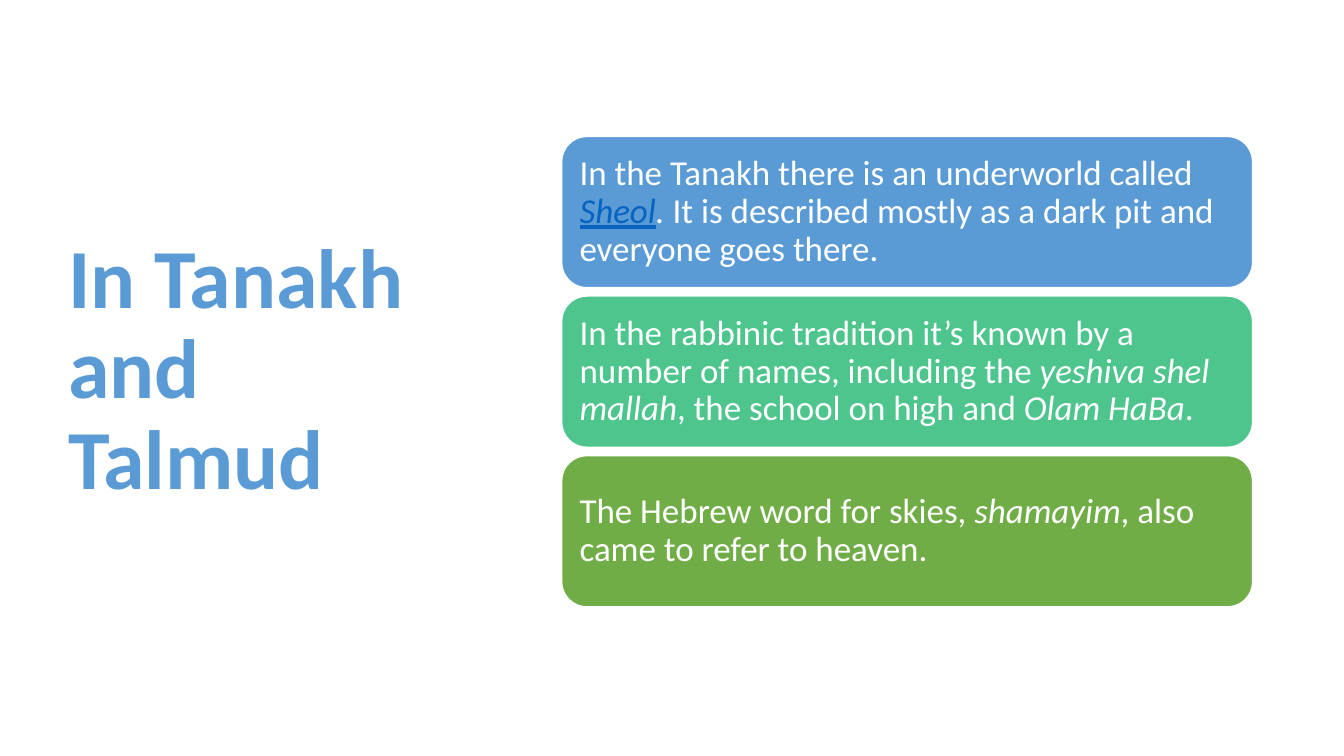
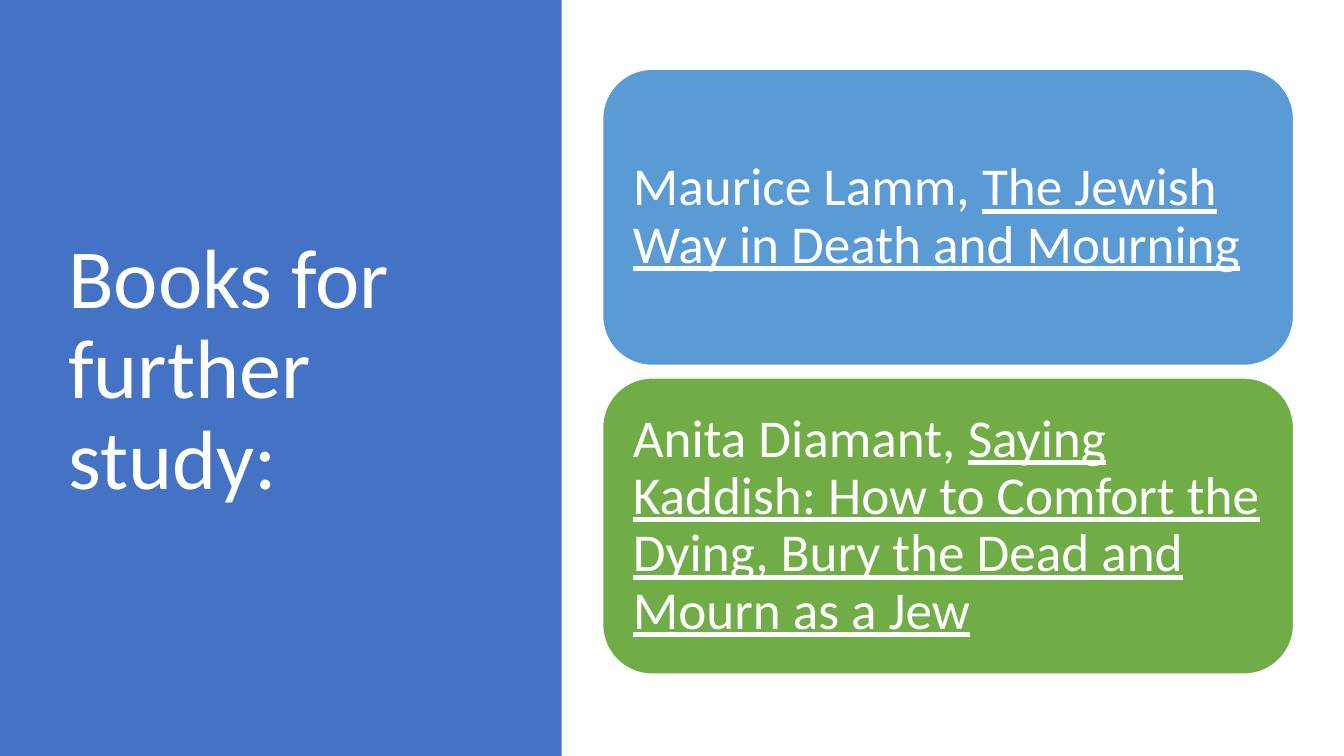
from pptx import Presentation
from pptx.dml.color import RGBColor
from pptx.enum.shapes import MSO_SHAPE
from pptx.enum.text import MSO_ANCHOR, MSO_AUTO_SIZE, PP_ALIGN
from pptx.util import Pt

PX = 9525  # EMU in one px, 96 px to the inch
FONT = "Calibri"
WHITE, BLUE, PANEL_BLUE = "FFFFFF", "5B9BD5", "4472C4"
MINT, GREEN, LINK_BLUE = "4DC58D", "70AD47", "0563C1"
CARD_WIDTH = 658


def color(hex_string):
    return RGBColor.from_string(hex_string)


def write_text(shape, runs, size, inset):
    """Fill the shape with one left-aligned paragraph of (text, font attributes, colour) runs."""
    frame = shape.text_frame
    frame.word_wrap = True
    frame.auto_size = MSO_AUTO_SIZE.NONE
    frame.vertical_anchor = MSO_ANCHOR.MIDDLE
    frame.margin_left = frame.margin_right = inset * PX
    frame.margin_top = frame.margin_bottom = inset * PX
    paragraph = frame.paragraphs[0]
    paragraph.alignment = PP_ALIGN.LEFT
    paragraph.line_spacing = 0.9
    for text, attributes, run_color in runs:
        run = paragraph.add_run()
        run.text = text
        run.font.name = FONT
        run.font.size = Pt(size)
        run.font.color.rgb = color(run_color)
        for attribute in attributes:
            setattr(run.font, attribute, True)


slides = [
    {
        "title": ("In Tanakh and Talmud", ["bold"], BLUE),
        "panel": False,
        "left": 535, "top": 130, "height": 144, "gap": 8, "size": 25, "inset": 10,
        "cards": [
            (BLUE, [
                ("In the Tanakh there is an underworld called ", [], WHITE),
                ("Sheol", ["italic", "underline"], LINK_BLUE),
                (". ", ["italic"], WHITE),
                ("It is described mostly as a dark pit and everyone goes there.", [], WHITE),
            ]),
            (MINT, [
                ("In the rabbinic tradition it’s known by a number of names, including the ", [], WHITE),
                ("yeshiva shel mallah", ["italic"], WHITE),
                (", the school on high and ", [], WHITE),
                ("Olam HaBa", ["italic"], WHITE),
                (".", [], WHITE),
            ]),
            (GREEN, [
                ("The Hebrew word for skies, ", [], WHITE),
                ("shamayim", ["italic"], WHITE),
                (", also came to refer to heaven.", [], WHITE),
            ]),
        ],
    },
    {
        "title": ("Books for further study:", [], WHITE),
        "panel": True,
        "left": 574, "top": 66, "height": 282, "gap": 12, "size": 38, "inset": 15,
        "cards": [
            (BLUE, [
                ("Maurice Lamm, ", [], WHITE),
                ("The Jewish Way in Death and Mourning", ["underline"], WHITE),
            ]),
            (GREEN, [
                ("Anita Diamant, ", [], WHITE),
                ("Saying Kaddish: How to Comfort the Dying, Bury the Dead and Mourn as a Jew",
                 ["underline"], WHITE),
            ]),
        ],
    },
]

presentation = Presentation()
presentation.slide_width = 1280 * PX
presentation.slide_height = 720 * PX
title_only = presentation.slide_layouts[5]

for content in slides:
    slide = presentation.slides.add_slide(title_only)
    title = slide.shapes.title
    title.left, title.top, title.width, title.height = 55 * PX, 65 * PX, 399 * PX, 578 * PX
    write_text(title, [content["title"]], 60, 10)

    if content["panel"]:
        panel = slide.shapes.add_shape(MSO_SHAPE.RECTANGLE, 0, 0, 535 * PX, 720 * PX)
        panel.shadow.inherit = False
        panel.fill.solid()
        panel.fill.fore_color.rgb = color(PANEL_BLUE)
        panel.line.fill.background()
        title.element.addprevious(panel.element)  # keep the title in front

    for row, (fill, runs) in enumerate(content["cards"]):
        top = content["top"] + row * (content["height"] + content["gap"])
        card = slide.shapes.add_shape(
            MSO_SHAPE.ROUNDED_RECTANGLE,
            content["left"] * PX, top * PX, CARD_WIDTH * PX, content["height"] * PX)
        card.shadow.inherit = False
        card.fill.solid()
        card.fill.fore_color.rgb = color(fill)
        card.line.color.rgb = color(WHITE)
        card.line.width = Pt(1)
        write_text(card, runs, content["size"], content["inset"])

presentation.save("out.pptx")
